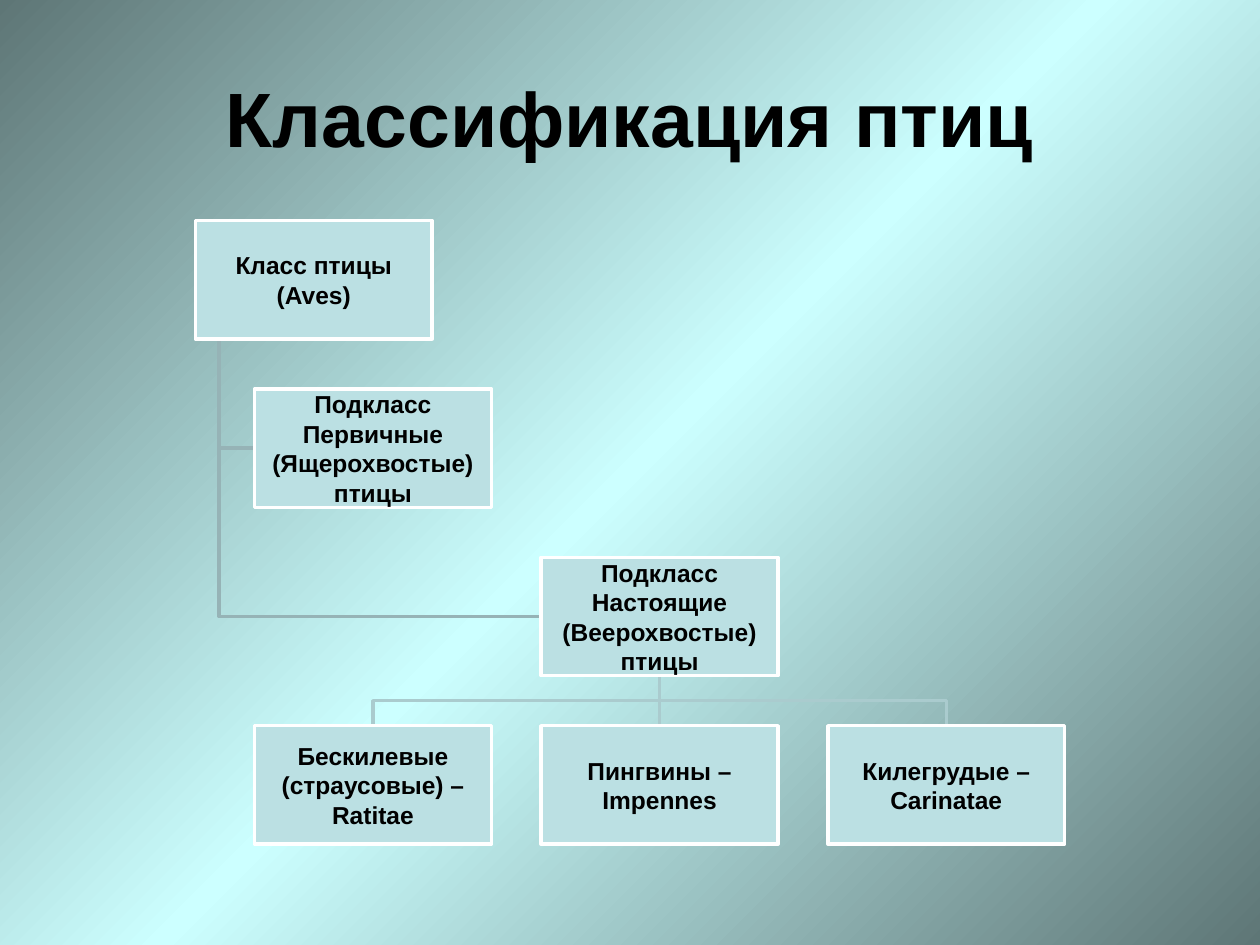
import copy
from dataclasses import dataclass

import pptx
import pptx.dml.color
import pptx.enum.shapes
import pptx.enum.text
import pptx.oxml
import pptx.oxml.ns
import pptx.util

Inches = pptx.util.Inches


@dataclass(frozen=True)
class Theme:
    font: str = "Arial"
    text: str = "000000"
    box_fill: str = "BBE0E3"
    box_line: str = "FFFFFF"
    class_link: str = "96B3B6"
    subclass_link: str = "AACBCE"
    gradient: tuple = ((0, "5E7676"), (0.5, "CCFFFF"), (1, "5E7676"))
    title_size: int = 44
    box_size: int = 14
    line_width: int = 2


def color(value):
    return pptx.dml.color.RGBColor.from_string(value)


class SlideBuilder:
    def __init__(self, slide, theme):
        self.slide = slide
        self.theme = theme

    def background(self):
        fill = self.slide.background.fill
        fill.gradient()
        fill.gradient_angle = 315  # counter-clockwise: towards bottom right
        stop_list = next(self.slide.element.iter(pptx.oxml.ns.qn("a:gsLst")))
        stop_list.append(copy.deepcopy(stop_list[0]))
        for stop, (position, value) in zip(fill.gradient_stops, self.theme.gradient):
            stop.position = position
            stop.color.rgb = color(value)

    def set_text(self, shape, text, size):
        frame = shape.text_frame
        frame.text = text
        frame.word_wrap = True
        frame.vertical_anchor = pptx.enum.text.MSO_ANCHOR.MIDDLE
        paragraph = frame.paragraphs[0]
        paragraph.alignment = pptx.enum.text.PP_ALIGN.CENTER
        font = paragraph.runs[0].font
        font.name = self.theme.font
        font.size = pptx.util.Pt(size)
        font.bold = True
        font.color.rgb = color(self.theme.text)

    def style_line(self, line, value):
        line.color.rgb = color(value)
        line.width = pptx.util.Pt(self.theme.line_width)

    def title(self, text, left, top, width, height):
        title = self.slide.shapes.title
        title.left, title.top = Inches(left), Inches(top)
        title.width, title.height = Inches(width), Inches(height)
        self.set_text(title, text, self.theme.title_size)

    def box(self, text, left, top, width, height):
        box = self.slide.shapes.add_shape(
            pptx.enum.shapes.MSO_SHAPE.RECTANGLE,
            Inches(left), Inches(top), Inches(width), Inches(height))
        box.shadow.inherit = False
        box.fill.solid()
        box.fill.fore_color.rgb = color(self.theme.box_fill)
        self.style_line(box.line, self.theme.box_line)
        self.set_text(box, text, self.theme.box_size)
        frame = box.text_frame
        frame.margin_left = frame.margin_right = Inches(0.01)
        frame.margin_top = frame.margin_bottom = Inches(0.01)
        return box

    def branch(self, points, value):
        start, *others = [(Inches(x), Inches(y)) for x, y in points]
        builder = self.slide.shapes.build_freeform(*start)
        builder.add_line_segments(others, close=False)
        branch = builder.convert_to_shape()
        branch.shadow.inherit = False
        branch.fill.background()
        self.style_line(branch.line, value)

    def straight_link(self, parent, child, value):
        link = self.slide.shapes.add_connector(
            pptx.enum.shapes.MSO_CONNECTOR.STRAIGHT, 0, 0, 0, 0)
        link.begin_connect(parent, 2)
        link.end_connect(child, 0)
        self.style_line(link.line, value)
        link.element.spPr.append(pptx.oxml.parse_xml(
            "<a:effectLst %s/>" % pptx.oxml.ns.nsdecls("a")))
        # Keep the link behind the boxes
        self.slide.shapes.element.insert(2, link.element)


def main():
    presentation = pptx.Presentation()
    presentation.slide_width = Inches(10)
    presentation.slide_height = Inches(7.5)
    theme = Theme()
    slide = presentation.slides.add_slide(presentation.slide_layouts[5])
    builder = SlideBuilder(slide, theme)
    builder.background()
    builder.title("Классификация птиц", 0.5, 0.3, 9, 1.25)

    # Grid of the tree
    width, height = 1.88, 0.94
    root_left, trunk = 1.55, 1.74
    columns = [2.02 + 4.55 / 2 * index for index in range(3)]
    rows = [1.75 + 4.01 / 3 * index for index in range(4)]
    centers = [left + width / 2 for left in columns]

    # Branches from the class to its subclasses
    for column, row in ((1, 2), (0, 1)):
        middle = rows[row] + height / 2
        builder.branch([(trunk, rows[0] + height), (trunk, middle),
                        (columns[column], middle)], theme.class_link)

    # Branches from the true birds to the outer groups
    bottom = rows[2] + height
    fork = (bottom + rows[3]) / 2
    for center in (centers[2], centers[0]):
        builder.branch([(centers[1], bottom), (centers[1], fork),
                        (center, fork), (center, rows[3])], theme.subclass_link)

    # Boxes
    nodes = (
        ("Класс птицы (Aves)", root_left, rows[0]),
        ("Подкласс Первичные (Ящерохвостые) птицы", columns[0], rows[1]),
        ("Подкласс Настоящие (Веерохвостые) птицы", columns[1], rows[2]),
        ("Бескилевые (страусовые) – Ratitae", columns[0], rows[3]),
        ("Пингвины – Impennes", columns[1], rows[3]),
        ("Килегрудые – Carinatae", columns[2], rows[3]),
    )
    boxes = [builder.box(text, left, top, width, height) for text, left, top in nodes]
    true_birds, penguins = boxes[2], boxes[4]
    builder.straight_link(true_birds, penguins, theme.subclass_link)

    presentation.save("out.pptx")


if __name__ == "__main__":
    main()
